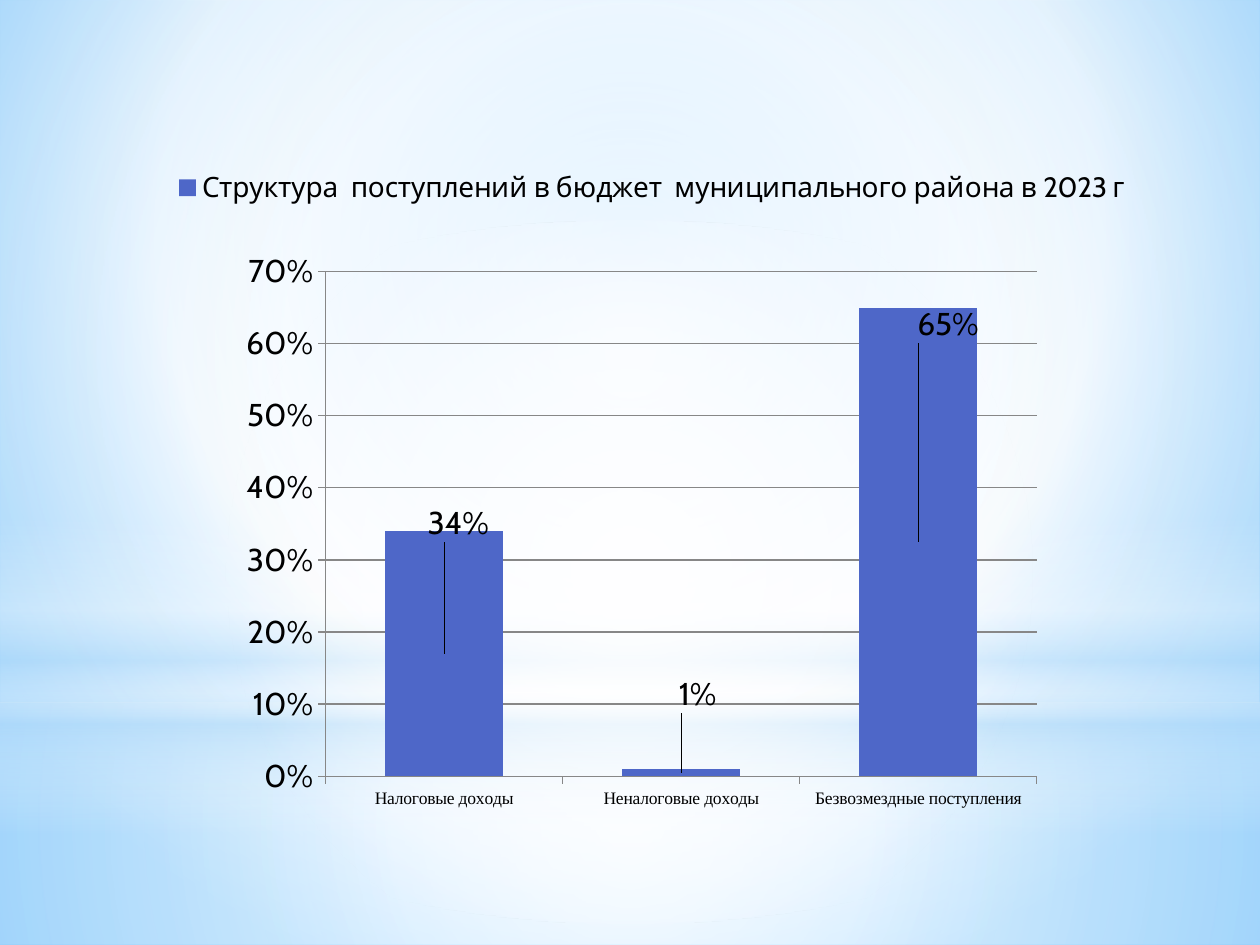
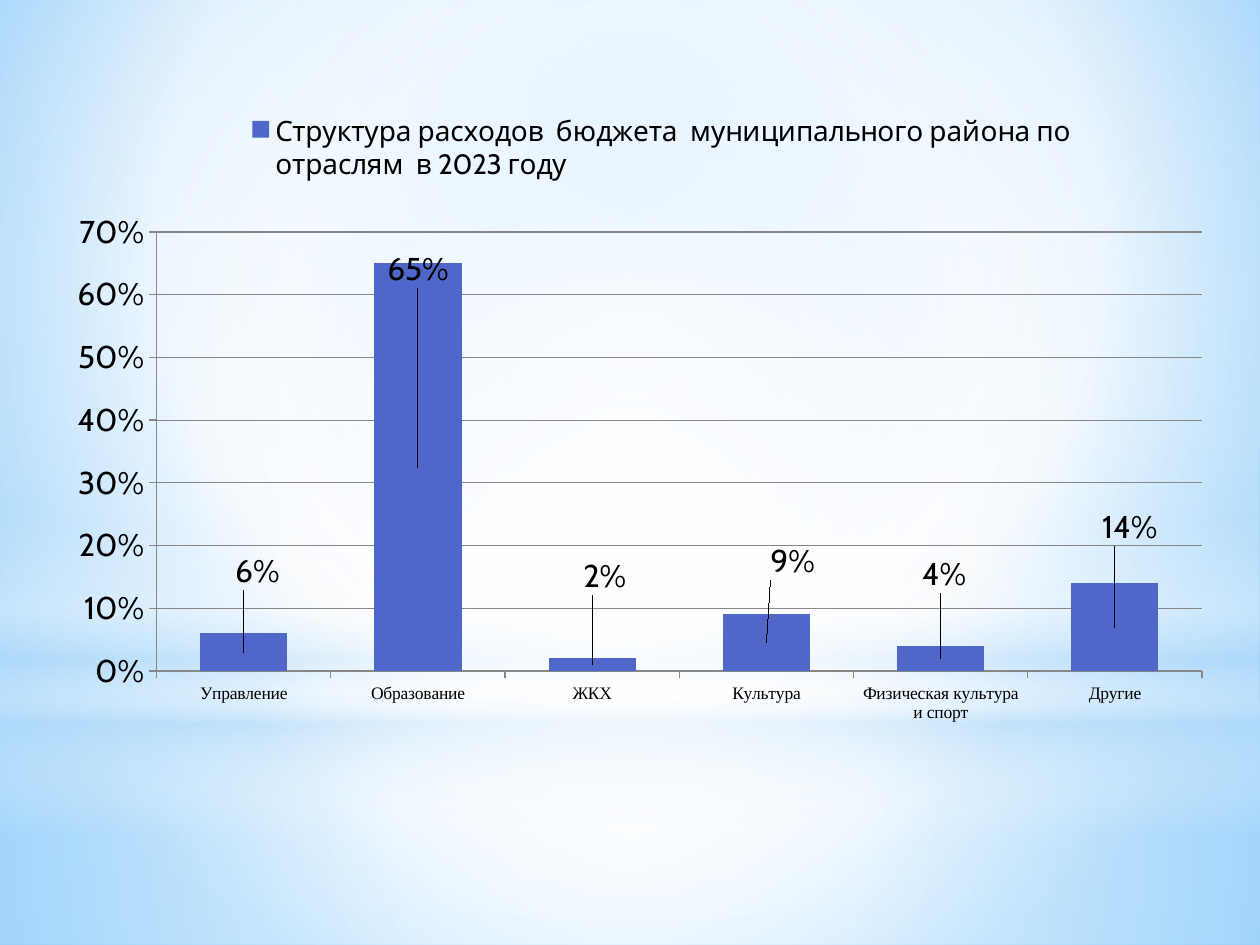
from lxml.etree import SubElement
from pptx import Presentation
from pptx.chart.data import CategoryChartData as ChartData
from pptx.dml.color import RGBColor
from pptx.enum.chart import XL_CHART_TYPE as ChartType
from pptx.enum.chart import XL_LABEL_POSITION as LabelPosition
from pptx.enum.chart import XL_LEGEND_POSITION as LegendPosition
from pptx.enum.chart import XL_TICK_MARK as TickMark
from pptx.enum.shapes import MSO_SHAPE as Shape
from pptx.oxml.ns import qn
from pptx.util import Cm, Pt

BLACK = RGBColor(0x00, 0x00, 0x00)
WHITE = RGBColor(0xFF, 0xFF, 0xFF)
GREY = RGBColor(0x87, 0x87, 0x87)
PALE = RGBColor(0xB4, 0xDC, 0xFA)
SKY = RGBColor(0x9E, 0xD5, 0xFF)
DEEP_SKY = RGBColor(0x5B, 0xB9, 0xFF)
BAR_BLUE = RGBColor(0x4E, 0x67, 0xC8)

WIDTH, HEIGHT = 25.4, 19.05
HORIZON = 14.17
CENTRE = (50, 50, 50, 50)

CHART_FONT = {"name": "Cabin", "size": Pt(18)}
LEGEND_FONT = {"name": "Cabin", "size": Pt(16)}
CATEGORY_FONT = {"name": "Times New Roman", "size": Pt(10)}

BACKDROP = [(0, SKY, 100), (60, WHITE, 100), (100, DEEP_SKY, 100)]
BANDS = [
    (Shape.RECTANGLE, HORIZON, HEIGHT - HORIZON,
     [(0, WHITE, 91), (37, WHITE, 76), (100, PALE, 79)], CENTRE),
    (Shape.RECTANGLE, 0, HORIZON,
     [(0, WHITE, 89), (48, WHITE, 62), (100, PALE, 79)], CENTRE),
    (Shape.RECTANGLE, 10.46, 6.35,
     [(0, WHITE, 0), (29, WHITE, 30), (45, PALE, 40),
      (55, WHITE, 26), (65, PALE, 60), (100, WHITE, 0)], None),
    (Shape.OVAL, 4.45, HORIZON, [(0, WHITE, 100), (56, WHITE, 0)], CENTRE),
]

INCOME = {
    "frame": (1.5, 1.52, 22.2, 16.41),
    "plot": (22.8, 24.1, 64.6, 62),
    "legend": (9, 11.3, 87, 5),
    "name": "Структура  поступлений в бюджет  муниципального района в 2023 г",
    "bars": [
        ("Налоговые доходы", 0.34, (1.3, -16)),
        ("Неналоговые доходы", 0.01, (1.5, -9.6)),
        ("Безвозмездные поступления", 0.65, (2.7, -26.7)),
    ],
}
SPENDING = {
    "frame": (1.5, 1.12, 23.01, 16.79),
    "plot": (7.2, 21.2, 91.6, 52.7),
    "legend": (15, 6.6, 73, 9),
    "name": "Структура расходов  бюджета  муниципального района по отраслям  в 2023 году",
    "bars": [
        ("Управление", 0.06, (1.2, -9.7)),
        ("Образование", 0.65, (0, -23.8)),
        ("ЖКХ", 0.02, (1.1, -10.6)),
        ("Культура", 0.09, (2.3, -9.8)),
        ("Физическая культура и спорт", 0.04, (0.3, -10.1)),
        ("Другие", 0.14, (1.3, -12)),
    ],
}


def apply_format(target, values):
    for name, value in values.items():
        setattr(target, name, value)


def set_font(font, values):
    apply_format(font, values)
    font.color.rgb = BLACK


def set_gradient(fill, parent, stops, focus):
    fill.solid()
    solid = parent.find(qn("a:solidFill"))
    gradient = solid.makeelement(qn("a:gradFill"), {"rotWithShape": "1"})
    parent.replace(solid, gradient)
    stop_list = SubElement(gradient, qn("a:gsLst"))
    for position, color, opacity in stops:
        stop = SubElement(stop_list, qn("a:gs"), pos=str(position * 1000))
        tint = SubElement(stop, qn("a:srgbClr"), val=str(color))
        SubElement(tint, qn("a:alpha"), val=str(opacity * 1000))
    if focus:
        circle = SubElement(gradient, qn("a:path"), {"path": "circle"})
        edges = {side: str(share * 1000) for side, share in zip("ltrb", focus)}
        SubElement(circle, qn("a:fillToRect"), edges)
    else:
        SubElement(gradient, qn("a:lin"), ang="5400000", scaled="0")


def add_band(page, kind, top, height, stops, focus):
    band = page.shapes.add_shape(kind, 0, Cm(top), Cm(WIDTH), Cm(height))
    band.shadow.inherit = False
    band.line.fill.background()
    set_gradient(band.fill, band.element.spPr, stops, focus)
    return band


def dress_master(deck, page):
    master = deck.slide_master
    background = master.background.fill
    background.solid()
    properties = master.element.xpath("p:cSld/p:bg/p:bgPr")[0]
    set_gradient(background, properties, BACKDROP, (20, 10, 20, 60))
    tree = master.element.xpath("p:cSld/p:spTree")[0]
    for index, band_values in enumerate(BANDS):
        band = add_band(page, *band_values).element
        band.xpath("p:nvSpPr/p:cNvPr")[0].set("id", str(101 + index))
        tree.insert(2 + index, band)


def place(part, index, shares, inner=False):
    for old in part.findall(qn("c:layout")):
        part.remove(old)
    layout = part.makeelement(qn("c:layout"))
    part.insert(index, layout)
    manual = SubElement(layout, qn("c:manualLayout"))
    if inner:
        SubElement(manual, qn("c:layoutTarget"), val="inner")
    if len(shares) == 4:
        for mode in ("xMode", "yMode"):
            SubElement(manual, qn(f"c:{mode}"), val="edge")
    for key, share in zip("xywh", shares):
        SubElement(manual, qn(f"c:{key}"), val=f"{share / 100:.3f}")


def style_axes(chart):
    value_axis, category_axis = chart.value_axis, chart.category_axis
    apply_format(value_axis, {
        "minimum_scale": 0, "maximum_scale": 0.7, "major_unit": 0.1,
        "has_major_gridlines": True,
    })
    apply_format(value_axis.tick_labels,
                 {"number_format": "0%", "number_format_is_linked": False})
    for axis in (value_axis, category_axis):
        apply_format(axis, {"major_tick_mark": TickMark.OUTSIDE,
                            "minor_tick_mark": TickMark.NONE})
    for line in (value_axis.format.line, category_axis.format.line,
                 value_axis.major_gridlines.format.line):
        line.color.rgb = GREY
        line.width = Pt(0.75)
    set_font(category_axis.tick_labels.font, CATEGORY_FONT)


def add_legend(chart, shares):
    chart.has_legend = True
    legend = chart.legend
    apply_format(legend, {"position": LegendPosition.RIGHT,
                          "include_in_layout": False})
    set_font(legend.font, LEGEND_FONT)
    place(chart.element.xpath("c:chart/c:legend")[0], 1, shares)


def shift_labels(chart, series, offsets):
    for index in range(len(offsets)):
        series.points[index].data_label.position = LabelPosition.CENTER
    for label, offset in zip(chart.element.xpath(".//c:dLbl"), offsets):
        place(label, 1, offset)


def add_share_chart(page, content):
    categories, values, offsets = zip(*content["bars"])
    data = ChartData(number_format="0%")
    data.categories = categories
    data.add_series(content["name"], values)
    frame = map(Cm, content["frame"])
    chart = page.shapes.add_chart(ChartType.COLUMN_STACKED, *frame, data).chart
    chart.has_title = False
    set_font(chart.font, CHART_FONT)
    plot = chart.plots[0]
    apply_format(plot, {"gap_width": 100, "overlap": 100,
                        "vary_by_categories": False})
    series = plot.series[0]
    series.format.fill.solid()
    series.format.fill.fore_color.rgb = BAR_BLUE
    style_axes(chart)
    add_legend(chart, content["legend"])
    place(chart.element.xpath("c:chart/c:plotArea")[0], 0, content["plot"], True)
    shift_labels(chart, series, offsets)


def main():
    deck = Presentation()
    apply_format(deck, {"slide_width": Cm(WIDTH), "slide_height": Cm(HEIGHT)})
    blank = deck.slide_layouts[6]
    pages = [deck.slides.add_slide(blank) for _ in range(2)]
    dress_master(deck, pages[0])
    for page, content in zip(pages, (INCOME, SPENDING)):
        add_share_chart(page, content)
    deck.save("out.pptx")


if __name__ == "__main__":
    main()
